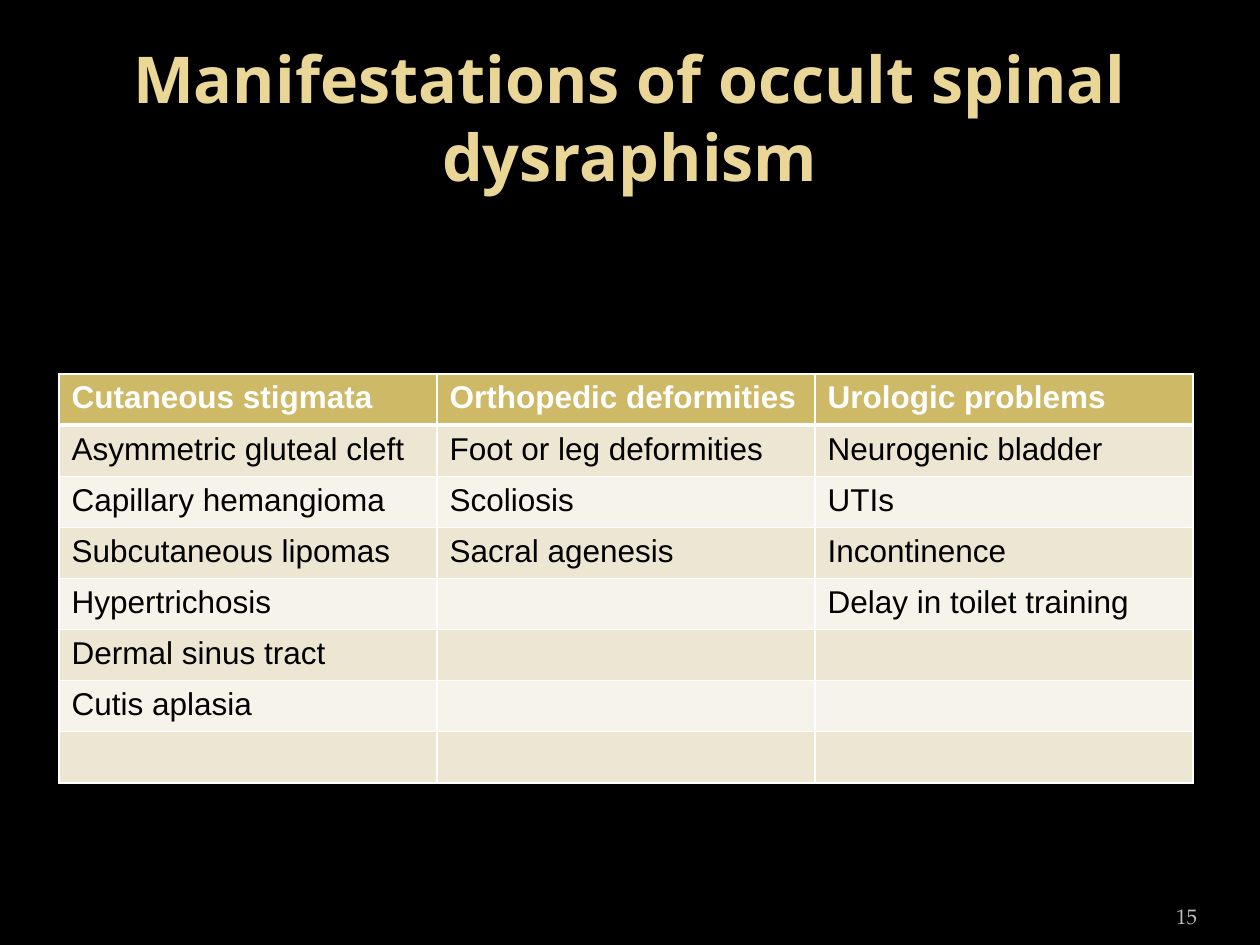
from lxml.etree import SubElement
from pptx import Presentation
from pptx.dml.color import RGBColor
from pptx.enum.text import MSO_ANCHOR, PP_ALIGN
from pptx.oxml.ns import qn
from pptx.util import Pt

COLORS = {
    "back": "000000", "title": "EAD696", "head": "CEB966",
    "odd": "EDE6D3", "even": "F6F3EA", "white": "FFFFFF",
    "text": "000000", "number": "BDBDBD",
}

# One list per column: heading first
COLUMNS = [
    ["Cutaneous stigmata", "Asymmetric gluteal cleft", "Capillary hemangioma",
     "Subcutaneous lipomas", "Hypertrichosis", "Dermal sinus tract",
     "Cutis aplasia"],
    ["Orthopedic deformities", "Foot or leg deformities", "Scoliosis",
     "Sacral agenesis"],
    ["Urologic problems", "Neurogenic bladder", "UTIs", "Incontinence",
     "Delay in toilet training"],
]
ROWS = 8


def color(name):
    return RGBColor.from_string(COLORS[name])


def style(para, font, size, tint, bold=False):
    para.font.name = font
    para.font.size = Pt(size)
    para.font.bold = bold
    para.font.color.rgb = color(tint)


def add_label(slide, box, text, align, anchor, side, *look):
    frame = slide.shapes.add_textbox(*map(Pt, box)).text_frame
    frame.word_wrap = True
    frame.vertical_anchor = anchor
    frame.margin_left = frame.margin_right = Pt(side)
    para = frame.paragraphs[0]
    para.text = text
    para.alignment = align
    style(para, *look)


def add_borders(cell, top, bottom):
    props = cell._tc.get_or_add_tcPr()
    widths = {"lnL": 1, "lnR": 1, "lnT": top, "lnB": bottom}
    for tag, width in widths.items():
        line = SubElement(props, qn(f"a:{tag}"), w=str(Pt(width)))
        fill = SubElement(line, qn("a:solidFill"))
        SubElement(fill, qn("a:srgbClr"), val=COLORS["white"])


def add_grid(slide, box):
    left, top, width, height = box
    table = slide.shapes.add_table(
        ROWS, len(COLUMNS), *map(Pt, box)).table
    for col in table.columns:
        col.width = Pt(width / len(COLUMNS))
    for row in table.rows:
        row.height = Pt(height / ROWS)
    for c, words in enumerate(COLUMNS):
        for r in range(ROWS):
            cell = table.cell(r, c)
            head = r == 0
            # Borders must come before the fill in the cell's XML
            add_borders(cell, 3 if r == 1 else 1, 3 if head else 1)
            cell.fill.solid()
            band = "odd" if r % 2 else "even"
            cell.fill.fore_color.rgb = color("head" if head else band)
            para = cell.text_frame.paragraphs[0]
            if r < len(words):
                para.text = words[r]
            style(para, "Arial", 18, "white" if head else "text", head)


def main():
    deck = Presentation()
    deck.slide_width, deck.slide_height = Pt(720), Pt(540)
    slide = deck.slides.add_slide(deck.slide_layouts[6])
    slide.background.fill.solid()
    slide.background.fill.fore_color.rgb = color("back")

    # Title
    add_label(slide, (36, 21.6, 648, 90),
              "Manifestations of occult spinal dysraphism",
              PP_ALIGN.CENTER, MSO_ANCHOR.MIDDLE, 7.2,
              "Open Sans", 36.9, "title", True)
    # Table of manifestations
    add_grid(slide, (33.75, 213.75, 648, 233.6))
    # Slide number
    add_label(slide, (624, 505.5, 60, 28.8), "15",
              PP_ALIGN.RIGHT, MSO_ANCHOR.BOTTOM, 0,
              "TeX Gyre Pagella", 12, "number")
    deck.save("out.pptx")


if __name__ == "__main__":
    main()
